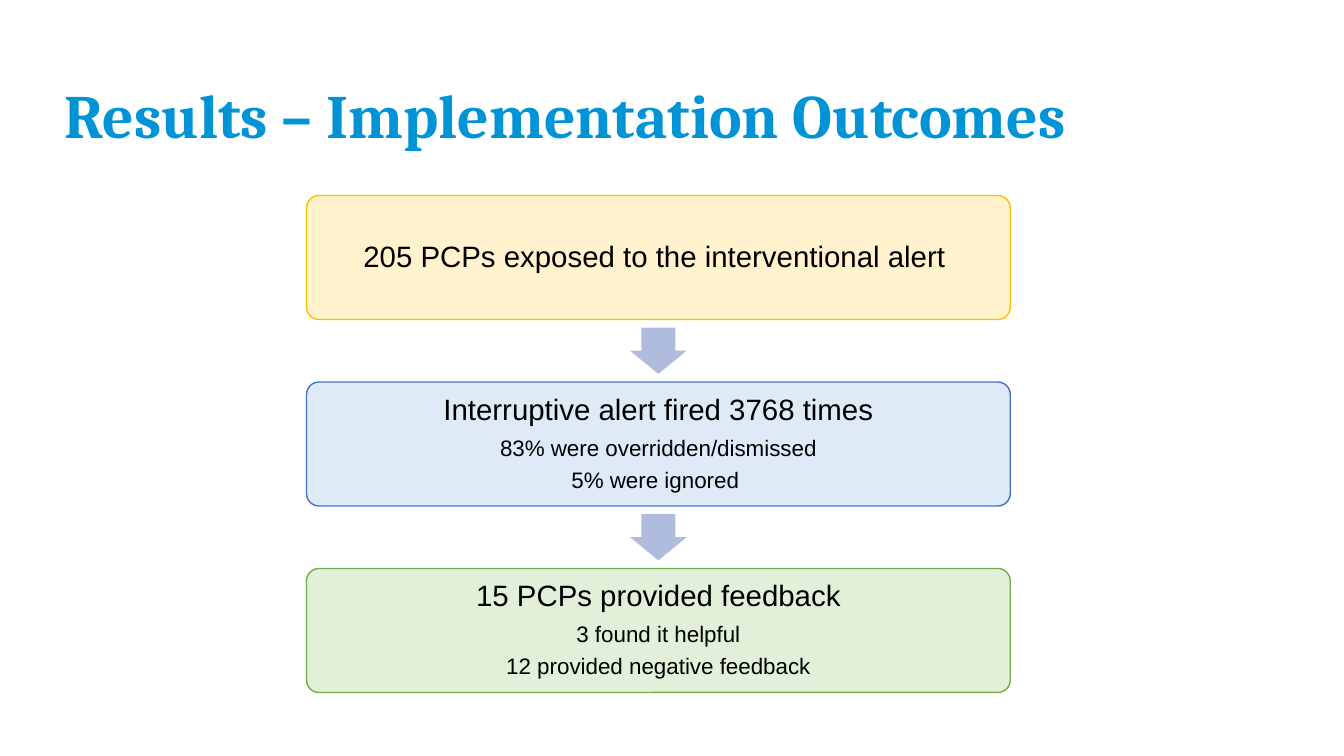
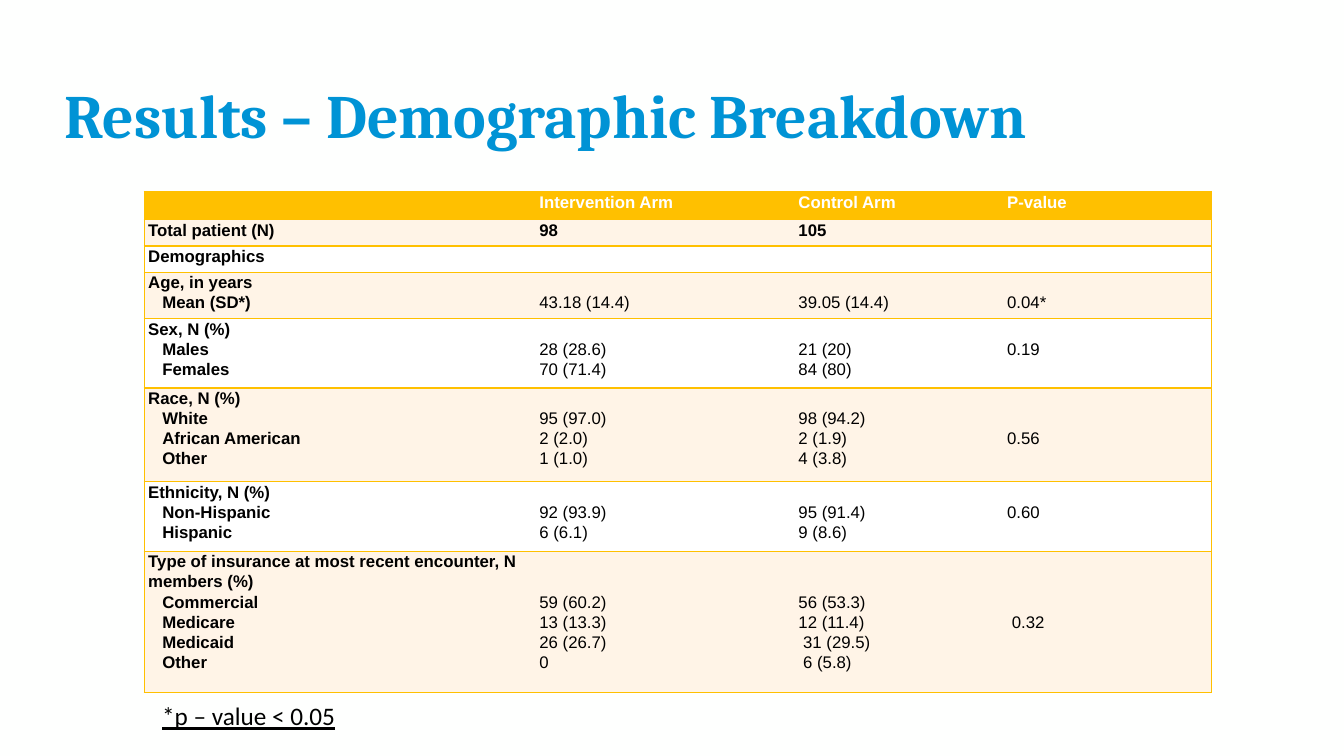
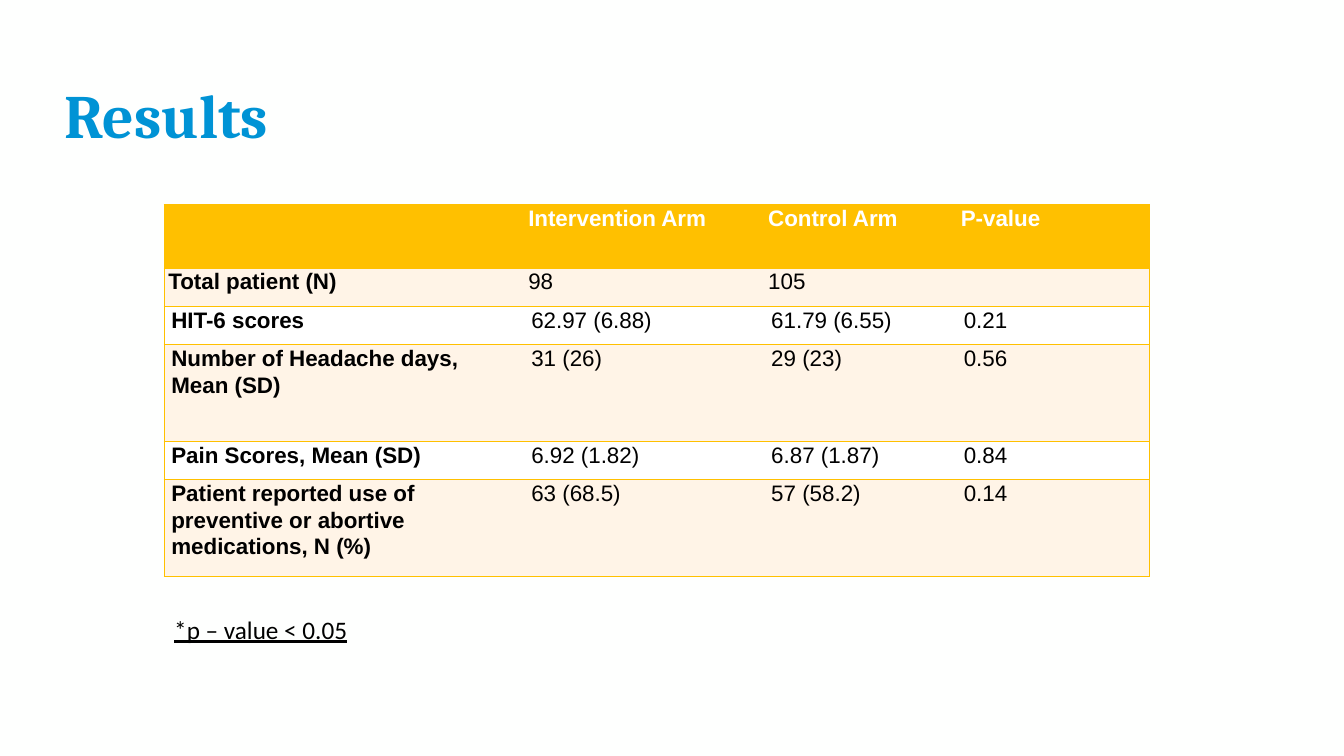
from collections import namedtuple
from dataclasses import dataclass

from lxml import etree
from pptx import Presentation, util as u
from pptx.dml.color import RGBColor
from pptx.enum import shapes, text
from pptx.oxml.ns import qn


@dataclass(frozen=True)
class Theme:
    background: str = "FEFFFE"
    heading: str = "0093D5"
    ink: str = "000000"
    white: str = "FFFFFF"
    gold: str = "FFC000"
    band: str = "FFF4E7"
    arrow: str = "B0BCDE"
    heading_font: str = "Cambria"
    body_font: str = "Arial"
    note_font: str = "Calibri"
    heading_size: int = 44
    step_size: int = 21
    detail_size: int = 16
    note_size: int = 18
    demographics_size: int = 12
    outcomes_size: int = 16
    row_spacing: float = 1.07
    tight_spacing: float = 0.9
    plain_table: str = "{2D5ABB26-0587-4C30-8999-92F81FD0307C}"


THEME = Theme()
Cell = namedtuple("Cell", "words skipped", defaults=[0])


def rgb(value):
    return RGBColor.from_string(value)


def paint(fill, color):
    fill.solid()
    fill.fore_color.rgb = rgb(color)


def write(paragraph, words, font, size, color, spacing, bold=False, underline=False):
    paragraph.line_spacing = spacing
    run = paragraph.add_run()
    run.text = words
    run.font.name = font
    run.font.size = u.Pt(size)
    run.font.color.rgb = rgb(color)
    run.font.bold = bold
    run.font.underline = underline


def paragraphs(frame, lines):
    for number, line in enumerate(lines):
        yield number, frame.paragraphs[0] if number == 0 else frame.add_paragraph(), line


def add_titled_slide(deck, words):
    slide = deck.slides.add_slide(deck.slide_layouts[5])
    heading = slide.shapes.title
    heading.left, heading.top = u.Inches(0.54), u.Inches(0.62)
    heading.width, heading.height = u.Inches(12.25), u.Inches(1.12)
    frame = heading.text_frame
    frame.auto_size = text.MSO_AUTO_SIZE.NONE
    frame.vertical_anchor = text.MSO_ANCHOR.MIDDLE
    frame.paragraphs[0].alignment = text.PP_ALIGN.LEFT
    write(frame.paragraphs[0], words, THEME.heading_font, THEME.heading_size,
          THEME.heading, THEME.tight_spacing, bold=True)
    return slide


def add_preset(slide, preset, box, fill, adjustments):
    shape = slide.shapes.add_shape(preset, *map(u.Inches, box))
    shape.shadow.inherit = False
    paint(shape.fill, fill)
    shape.line.fill.background()
    for number, value in enumerate(adjustments):
        shape.adjustments[number] = value
    return shape


def add_step(slide, box, fill, outline, lines):
    step = add_preset(slide, shapes.MSO_SHAPE.ROUNDED_RECTANGLE, box, fill, [0.1])
    paint(step.line.fill, outline)
    step.line.width = u.Pt(1)
    frame = step.text_frame
    frame.word_wrap = True
    frame.vertical_anchor = text.MSO_ANCHOR.MIDDLE
    frame.margin_left = frame.margin_right = u.Inches(0.12)
    frame.margin_top = frame.margin_bottom = u.Inches(0.1)
    for number, paragraph, line in paragraphs(frame, lines):
        size = THEME.detail_size if number else THEME.step_size
        paragraph.alignment = text.PP_ALIGN.CENTER
        paragraph.space_after = u.Pt(0.35 * size)
        write(paragraph, line, THEME.body_font, size, THEME.ink, THEME.tight_spacing)


def add_flow(slide, steps):
    left, top, width, height, pitch = 3.04, 1.94, 6.98, 1.23, 1.85
    arrow_width, arrow_height = 0.56, 0.46
    arrow_left = left + (width - arrow_width) / 2
    arrow_drop = (pitch + height - arrow_height) / 2
    for number, (fill, outline, lines) in enumerate(steps):
        step_top = top + number * pitch
        if number:
            add_preset(slide, shapes.MSO_SHAPE.DOWN_ARROW,
                       (arrow_left, step_top - pitch + arrow_drop, arrow_width, arrow_height),
                       THEME.arrow, [0.6, 0.5])
        add_step(slide, (left, step_top, width, height), fill, outline, lines)


def add_borders(cell, sides):
    properties = cell._tc.get_or_add_tcPr()
    for side in sides:
        line = etree.SubElement(properties, qn(f"a:ln{side}"), w=str(u.Pt(1)))
        solid = etree.SubElement(line, qn("a:solidFill"))
        etree.SubElement(solid, qn("a:srgbClr"), val=THEME.gold)


def fill_cell(cell, content, size, color, bold, inset, indent):
    cell.margin_left = cell.margin_right = u.Inches(inset)
    cell.margin_top = u.Inches(content.skipped * size / 60)
    cell.margin_bottom = 0
    if not content.words:
        ending = etree.SubElement(cell.text_frame.paragraphs[0]._p, qn("a:endParaRPr"))
        ending.set("sz", str(size * 100))
        return
    for number, paragraph, line in paragraphs(cell.text_frame, content.words.split("\n")):
        if number and indent:
            paragraph._p.get_or_add_pPr().set("marL", str(u.Inches(indent)))
        write(paragraph, line, THEME.body_font, size, color, THEME.row_spacing, bold)


def add_results_table(slide, corner, widths, heights, rows, size, bold_rows,
                      body_inset, indent=0):
    frame = slide.shapes.add_table(len(heights), len(widths), *map(u.Inches, corner),
                                   u.Inches(sum(widths)), u.Inches(sum(heights)))
    table = frame.table
    table._tbl.tblPr.find(qn("a:tableStyleId")).text = THEME.plain_table
    table.first_row = table.horz_banding = False
    for column, width in zip(table.columns, widths):
        column.width = u.Inches(width)
    for row, height in zip(table.rows, heights):
        row.height = u.Inches(height)
    last = len(widths) - 1
    header = ("", "Intervention Arm", "Control Arm", "P-value")
    for r, row in enumerate((header, *rows)):
        background = (THEME.band if r % 2 else THEME.white) if r else THEME.gold
        for c, content in enumerate(row):
            cell = table.cell(r, c)
            add_borders(cell, "L" * (c == 0) + "R" * (c == last) + "TB")
            paint(cell.fill, background)
            fill_cell(cell, content if isinstance(content, Cell) else Cell(content), size,
                      THEME.ink if r else THEME.white, c == 0 or r < bold_rows,
                      body_inset if r > 1 else 0.04, 0 if c else indent)
    return table


def add_footnote(slide, left, top):
    note = slide.shapes.add_textbox(u.Inches(left), u.Inches(top),
                                    u.Inches(6.67), u.Inches(0.41))
    note.text_frame.word_wrap = True
    note.text_frame.auto_size = text.MSO_AUTO_SIZE.SHAPE_TO_FIT_TEXT
    paragraph = note.text_frame.paragraphs[0]
    paragraph.space_after = u.Pt(8)
    write(paragraph, "*p – value < 0.05", THEME.note_font, THEME.note_size, THEME.ink,
          THEME.row_spacing, underline=True)


def build_implementation(deck):
    slide = add_titled_slide(deck, "Results – Implementation Outcomes")
    add_flow(slide, [
        ("FFF2CC", "FFC000", ["205 PCPs exposed to the interventional alert "]),
        ("DEEBF7", "4472C4", ["Interruptive alert fired 3768 times",
                              "83% were overridden/dismissed", "5% were ignored "]),
        ("E2F0D9", "70AD47", ["15 PCPs provided feedback",
                              "3 found it helpful", "12 provided negative feedback"]),
    ])


def build_demographics(deck):
    slide = add_titled_slide(deck, "Results – Demographic Breakdown")
    rows = [
        ("Total patient (N)", "98", "105", ""),
        ("Demographics", "", "", ""),
        ("Age, in years\nMean (SD*)",
         Cell("43.18 (14.4)", 1), Cell("39.05 (14.4)", 1), Cell("0.04*", 1)),
        ("Sex, N (%)\nMales\nFemales",
         Cell("28 (28.6)\n70 (71.4)", 1), Cell("21 (20)\n84 (80)", 1), Cell("0.19", 1)),
        ("Race, N (%)\nWhite\nAfrican American\nOther",
         Cell("95 (97.0)\n2 (2.0)\n1 (1.0)", 1), Cell("98 (94.2)\n2 (1.9)\n4 (3.8)", 1),
         Cell("0.56", 2)),
        ("Ethnicity, N (%)\nNon-Hispanic\nHispanic",
         Cell("92 (93.9)\n6 (6.1)", 1), Cell("95 (91.4)\n9 (8.6)", 1), Cell("0.60", 1)),
        ("Type of insurance at most recent encounter, N members (%)\n"
         "Commercial\nMedicare\nMedicaid\nOther",
         Cell("59 (60.2)\n13 (13.3)\n26 (26.7)\n0", 2),
         Cell("56 (53.3)\n12 (11.4)\n 31 (29.5)\n 6 (5.8)", 2), Cell(" 0.32", 3)),
    ]
    table = add_results_table(slide, (1.43, 1.9), [3.88, 2.57, 2.07, 2.07],
                              [0.28, 0.26, 0.26, 0.46, 0.69, 0.93, 0.69, 1.4], rows,
                              THEME.demographics_size, bold_rows=2, body_inset=0.04,
                              indent=0.14)
    table.cell(2, 0).merge(table.cell(2, 2))
    add_footnote(slide, 1.51, 6.88)


def build_outcomes(deck):
    slide = add_titled_slide(deck, "Results")
    rows = [
        ("Total patient (N)", "98", "105", ""),
        ("HIT-6 scores", "62.97 (6.88)", "61.79 (6.55)", "0.21"),
        ("Number of Headache days,\nMean (SD)", "31 (26)", "29 (23)", "0.56"),
        ("Pain Scores, Mean (SD)", "6.92 (1.82)", "6.87 (1.87)", "0.84"),
        ("Patient reported use of preventive or abortive medications, N (%)",
         "63 (68.5)", "57 (58.2)", "0.14"),
    ]
    add_results_table(slide, (1.63, 2.03), [3.57, 2.38, 1.91, 1.91],
                      [0.63, 0.38, 0.38, 0.96, 0.38, 0.96], rows,
                      THEME.outcomes_size, bold_rows=1, body_inset=0.07)
    add_footnote(slide, 1.63, 6.02)


def main():
    deck = Presentation()
    deck.slide_width, deck.slide_height = u.Inches(13.33), u.Inches(7.5)
    paint(deck.slide_master.background.fill, THEME.background)
    build_implementation(deck)
    build_demographics(deck)
    build_outcomes(deck)
    deck.save("out.pptx")


if __name__ == "__main__":
    main()
